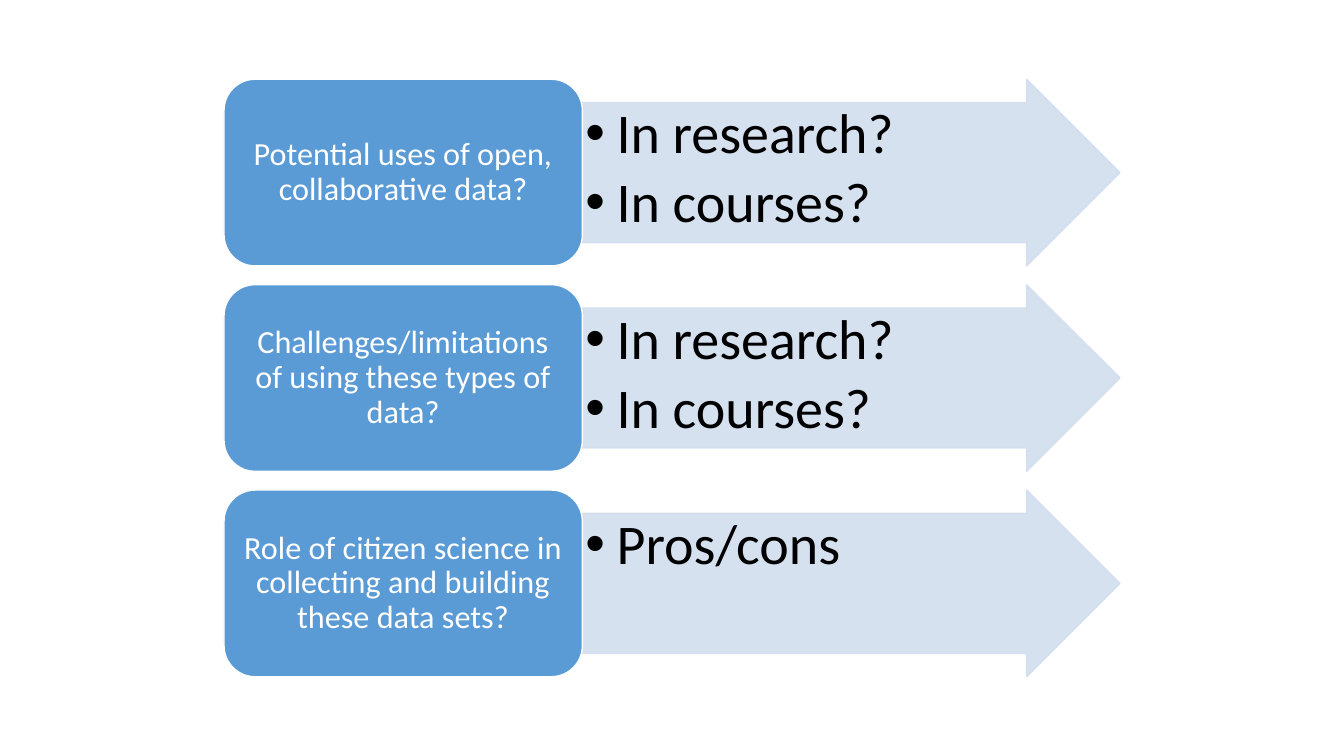
from dataclasses import dataclass

from lxml.etree import SubElement as Sub
from pptx import Presentation
from pptx.dml.color import RGBColor as Rgb
from pptx.enum.shapes import MSO_SHAPE as Shape
from pptx.enum.text import MSO_ANCHOR as Anchor, MSO_AUTO_SIZE as Fit, PP_ALIGN as Align
from pptx.oxml.ns import qn
from pptx.util import Inches, Pt

HUES = {"box": "5B9BD5", "arrow": "D2DEEF", "white": "FFFFFF", "black": "000000"}
WIDE, HIGH = Inches(13.33), Inches(7.5)
LEFT, SPAN = WIDE / 6, WIDE * 2 / 3
BOX = SPAN * 0.4
ROW = HIGH * 0.247
STEP = ROW * 1.1
TOP = (HIGH - ROW - 2 * STEP) / 2


@dataclass
class Topic:
    head: str
    items: list[str]


TOPICS = [
    Topic("Potential uses of open, collaborative data?", ["In research?", "In courses?"]),
    Topic("Challenges/limitations of using these types of data?", ["In research?", "In courses?"]),
    Topic("Role of citizen science in collecting and building these data sets?", ["Pros/cons"]),
]


def place(item, left: float, top: float, width: float, height: float) -> None:
    item.left, item.top = int(left), int(top)
    item.width, item.height = int(width), int(height)


def write(shape, lines: list[str], *, size: int, hue: str, align=Align.LEFT,
          anchor=Anchor.TOP, pad=(0.1, 0.05), after: int = 0, dots: bool = False) -> None:
    frame = shape.text_frame
    frame.text = "\n".join(lines)
    frame.word_wrap, frame.auto_size = True, Fit.NONE
    frame.vertical_anchor = anchor
    frame.margin_left = frame.margin_right = Inches(pad[0])
    frame.margin_top = frame.margin_bottom = Inches(pad[1])
    for para in frame.paragraphs:
        para.alignment, para.line_spacing = align, 0.9
        para.space_before, para.space_after = Pt(0), Pt(after)
        font = para.runs[0].font
        font.name, font.size, font.bold = "Calibri", Pt(size), False
        font.color.rgb = Rgb.from_string(HUES[hue])
        if dots:
            para.level = 1
            props = para._p.get_or_add_pPr()
            props.set("marL", str(Inches(0.31)))
            props.set("indent", str(-Inches(0.31)))
            Sub(props, qn("a:buFont"), typeface="Arial")
            Sub(props, qn("a:buChar"), char="•")


def draw(slide, kind: Shape, left: float, top: float, width: float,
         fill: str, line: str, alpha: int = 100):
    shape = slide.shapes.add_shape(kind, int(left), int(top), int(width), int(ROW))
    shape.shadow.inherit = False
    shape.fill.solid()
    shape.fill.fore_color.rgb = Rgb.from_string(HUES[fill])
    shape.line.color.rgb = Rgb.from_string(HUES[line])
    shape.line.width = Pt(1)
    if alpha < 100:
        for tint in shape.element.spPr.iter(qn("a:srgbClr")):
            Sub(tint, qn("a:alpha"), val=str(alpha * 1000))
    return shape


def add_row(slide, topic: Topic, body, top: float) -> None:
    arrow = draw(slide, Shape.RIGHT_ARROW, LEFT + BOX, top, SPAN - BOX, "arrow", "arrow", 90)
    arrow.adjustments[0] = 0.75
    place(body, LEFT + BOX, top + ROW / 8, SPAN - BOX - ROW * 3 / 8, ROW * 0.75)
    write(body, topic.items, size=40, hue="black", pad=(0.03, 0.03), after=6, dots=True)
    slide.shapes.element.append(body.element)
    box = draw(slide, Shape.ROUNDED_RECTANGLE, LEFT, top, BOX, "box", "white")
    write(box, [topic.head], size=23, hue="white", align=Align.CENTER, anchor=Anchor.MIDDLE)


def main() -> None:
    deck = Presentation()
    deck.slide_width, deck.slide_height = WIDE, HIGH
    slide = deck.slides.add_slide(deck.slide_layouts.get_by_name("Comparison"))
    title, *bodies = slide.placeholders
    for spare in [title, *bodies[len(TOPICS):]]:
        slide.shapes.element.remove(spare.element)
    for row, (topic, body) in enumerate(zip(TOPICS, bodies)):
        add_row(slide, topic, body, TOP + row * STEP)
    deck.save("out.pptx")


if __name__ == "__main__":
    main()
